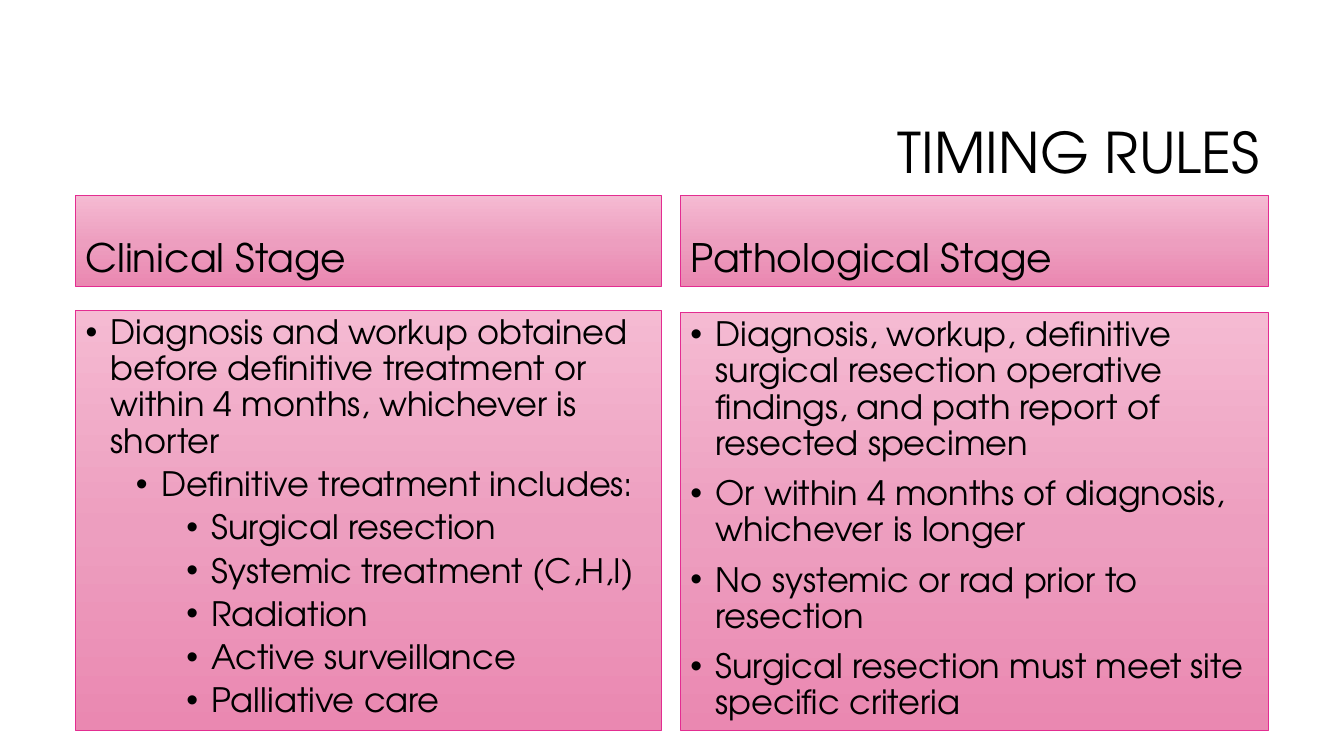
from copy import deepcopy
from lxml import etree
from pptx import Presentation
from pptx import util as u
from pptx.dml.color import RGBColor
from pptx.enum import shapes, text
from pptx.oxml import ns

FONT = "TeX Gyre Adventor"
COLORS = {"text": "000000", "border": "E32D91",
          "top": "F5BAD2", "middle": "ED9EBF", "bottom": "EA88B1"}

deck = Presentation()
deck.slide_width, deck.slide_height = u.Inches(13.33), u.Inches(7.5)
page = deck.slides.add_slide(deck.slide_layouts[6])


def add_panel(left, top, width, height):
    panel = page.shapes.add_shape(
        shapes.MSO_SHAPE.RECTANGLE, u.Inches(left), u.Inches(top),
        u.Inches(width), u.Inches(height))
    panel.shadow.inherit = False
    panel.line.color.rgb = RGBColor.from_string(COLORS["border"])
    panel.line.width = u.Pt(0.75)
    panel.fill.gradient()
    panel.fill.gradient_angle = 270
    stops = panel._element.spPr.find(".//" + ns.qn("a:gsLst"))
    stops.append(deepcopy(stops[-1]))
    for stop, place, shade in zip(panel.fill.gradient_stops, (0, 0.52, 1),
                                  ("top", "middle", "bottom")):
        stop.position = place
        stop.color.rgb = RGBColor.from_string(COLORS[shade])
    return panel


def write(box, lines, size, anchor, align=text.PP_ALIGN.LEFT, bullets=False):
    frame = box.text_frame
    frame.word_wrap = True
    frame.vertical_anchor = anchor
    for index, (level, words) in enumerate(lines):
        para = frame.paragraphs[0] if index == 0 else frame.add_paragraph()
        if bullets:
            props = para._p.get_or_add_pPr()
            props.set("marL", str(u.Inches(0.25 + 0.5 * level)))
            props.set("indent", str(u.Inches(-0.25)))
            etree.SubElement(props, ns.qn("a:buFont")).set("typeface", "Arial")
            etree.SubElement(props, ns.qn("a:buChar")).set("char", "•")
        para.level = level
        para.alignment = align
        para.line_spacing = 0.9
        if index:
            para.space_before = u.Pt(5 if level else 10)
        span = para.add_run()
        span.text = words
        span.font.name, span.font.size = FONT, u.Pt(size)
        span.font.color.rgb = RGBColor.from_string(COLORS["text"])


# Title
title = page.shapes.add_textbox(u.Inches(3.17), u.Inches(0.83),
                                u.Inches(9.42), u.Inches(1.42))
write(title, [(0, "TIMING RULES")], 40, text.MSO_ANCHOR.MIDDLE,
      text.PP_ALIGN.RIGHT)

# Stage columns: left, width, top of the list, heading, list lines
columns = [
    (0.75, 5.81, 3.08, "Clinical Stage", [
        (0, "Diagnosis and workup obtained before definitive treatment "
            "or within 4 months, whichever is shorter"),
        (1, "Definitive treatment includes:"),
        (2, "Surgical resection"),
        (2, "Systemic treatment (C,H,I)"),
        (2, "Radiation"),
        (2, "Active surveillance"),
        (2, "Palliative care")]),
    (6.75, 5.83, 3.1, "Pathological Stage", [
        (0, "Diagnosis, workup, definitive surgical resection operative "
            "findings, and path report of resected specimen"),
        (0, "Or within 4 months of diagnosis, whichever is longer"),
        (0, "No systemic or rad prior to resection"),
        (0, "Surgical resection must meet site specific criteria")]),
]
LIST_BOTTOM = 7.25
for left, width, list_top, heading, lines in columns:
    write(add_panel(left, 1.94, width, 0.9), [(0, heading)], 28,
          text.MSO_ANCHOR.BOTTOM)
    write(add_panel(left, list_top, width, LIST_BOTTOM - list_top), lines, 24,
          text.MSO_ANCHOR.TOP, bullets=True)

deck.save("out.pptx")
